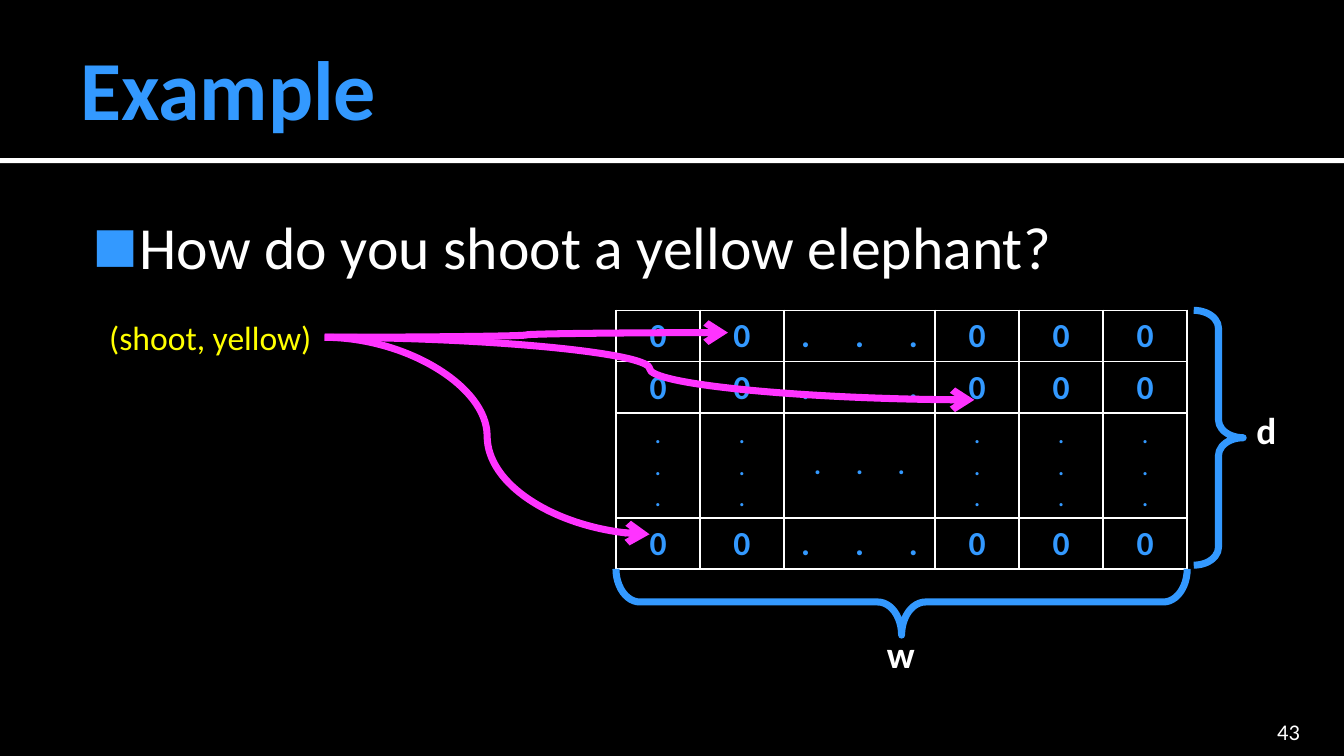
"""Build the slide that shows a feature pair hashed into a d by w table of counters."""
import pptx
import pptx.dml.color
import pptx.enum.shapes
import pptx.enum.text
import pptx.oxml.ns
import pptx.util
from lxml import etree

Pt = pptx.util.Pt
RGBColor = pptx.dml.color.RGBColor
SHAPE = pptx.enum.shapes.MSO_SHAPE
CONNECTOR = pptx.enum.shapes.MSO_CONNECTOR
ALIGN = pptx.enum.text.PP_ALIGN
ANCHOR = pptx.enum.text.MSO_ANCHOR
qn = pptx.oxml.ns.qn

BLACK = RGBColor(0x00, 0x00, 0x00)
WHITE = RGBColor(0xFF, 0xFF, 0xFF)
BLUE = RGBColor(0x33, 0x99, 0xFF)
YELLOW = RGBColor(0xFF, 0xFF, 0x00)
PINK = RGBColor(0xFF, 0x33, 0xFF)

SLIDE_SIZE = (720, 405)
LINE_WIDTH = 3.78

HEADING = "Example"
QUESTION = "How do you shoot a yellow elephant?"
PAIR = "(shoot, yellow)"
PAGE = "43"
COUNTERS = ["0", "0", ". . .", "0", "0", "0"]
GAP = [".\n.\n.", ".\n.\n.", ". . .", ".\n.\n.", ".\n.\n.", ".\n.\n."]
SKETCH = [(COUNTERS, 18), (COUNTERS, 18), (GAP, 14), (COUNTERS, 18)]

SKETCH_LEFT, SKETCH_TOP = 330, 166.25
COLUMN_WIDTHS = [45, 45, 81, 45, 45, 45]
ROW_HEIGHTS = [27.5, 27.5, 54, 27.5]
SKETCH_WIDTH, SKETCH_HEIGHT = sum(COLUMN_WIDTHS), sum(ROW_HEIGHTS)

BRACES = [
    (639.5, SKETCH_TOP, 26.5, SKETCH_HEIGHT, 180),
    (465.25, 169.5, 35.5, SKETCH_WIDTH, 270),
]
PAIR_END = (174, 180.75)
HASH_TARGETS = [(390, 178.25), (522, 214.25), (348, 286.25)]


def write(frame, text, size, color=WHITE, bold=False, align=ALIGN.LEFT,
          anchor=ANCHOR.TOP, insets=(7.2, 3.6, 7.2, 3.6)):
    """Fill a text frame, one paragraph a line, and spread a row of dots."""
    frame.word_wrap = True
    frame.vertical_anchor = anchor
    (frame.margin_left, frame.margin_top,
     frame.margin_right, frame.margin_bottom) = map(Pt, insets)
    for index, line in enumerate(text.split("\n")):
        paragraph = frame.add_paragraph() if index else frame.paragraphs[0]
        paragraph.alignment = align
        spread = line == ". . ."
        for part in (line[:-1], line[-1]) if spread else (line,):
            run = paragraph.add_run()
            run.text = part
            run.font.name = "Calibri"
            run.font.size = Pt(size)
            run.font.bold = bold
            run.font.color.rgb = color
            if spread and len(part) > 1:
                run.font._element.set("spc", str(round(size / 18 * 1000)))


def label(slide, box, text, size, **style):
    """Add a text box and return its text frame."""
    frame = slide.shapes.add_textbox(*map(Pt, box)).text_frame
    write(frame, text, size, **style)
    return frame


def add_bullet(paragraph):
    """Give a paragraph a blue square bullet with a hanging indent."""
    properties = paragraph._p.get_or_add_pPr()
    properties.set("marL", str(Pt(34.5)))
    properties.set("indent", str(-Pt(25.2)))
    color = etree.SubElement(properties, qn("a:buClr"))
    etree.SubElement(color, qn("a:srgbClr"), val=str(BLUE))
    etree.SubElement(properties, qn("a:buSzPct"), val="80000")
    etree.SubElement(properties, qn("a:buFont"), typeface="Calibri")
    etree.SubElement(properties, qn("a:buChar"), char="■")


def add_borders(cell):
    """Draw white lines on the four sides of a cell."""
    properties = cell._tc.get_or_add_tcPr()
    for index, side in enumerate(("a:lnL", "a:lnR", "a:lnT", "a:lnB")):
        border = etree.Element(qn(side), w=str(Pt(1)))
        fill = etree.SubElement(border, qn("a:solidFill"))
        etree.SubElement(fill, qn("a:srgbClr"), val=str(WHITE))
        properties.insert(index, border)


def add_sketch(slide):
    """Add the table of counters."""
    table = slide.shapes.add_table(
        len(SKETCH), len(COLUMN_WIDTHS), Pt(SKETCH_LEFT), Pt(SKETCH_TOP),
        Pt(SKETCH_WIDTH), Pt(SKETCH_HEIGHT)).table
    table.first_row = table.horz_banding = False
    for column, width in zip(table.columns, COLUMN_WIDTHS):
        column.width = Pt(width)
    for row, height, (values, size) in zip(table.rows, ROW_HEIGHTS, SKETCH):
        row.height = Pt(height)
        for cell, value in zip(row.cells, values):
            write(cell.text_frame, value, size, color=BLUE,
                  bold="\n" not in value, align=ALIGN.CENTER)
            cell.vertical_anchor = ANCHOR.MIDDLE
            cell.margin_left = cell.margin_right = Pt(7.2)
            cell.margin_top = cell.margin_bottom = Pt(2.9)
            cell.fill.background()
            add_borders(cell)


def add_brace(slide, left, top, width, height, rotation):
    """Add a blue brace that marks one dimension of the table."""
    brace = slide.shapes.add_shape(
        SHAPE.LEFT_BRACE, Pt(left), Pt(top), Pt(width), Pt(height))
    brace.rotation = rotation
    brace.adjustments[0] = 0.36
    brace.shadow.inherit = False
    brace.fill.background()
    brace.line.color.rgb = BLUE
    brace.line.width = Pt(LINE_WIDTH)


def add_hash_arrow(slide, target):
    """Add a curved arrow from the pair to a counter."""
    arrow = slide.shapes.add_connector(
        CONNECTOR.CURVE, *map(Pt, PAIR_END + target))
    arrow.line.color.rgb = PINK
    arrow.line.width = Pt(LINE_WIDTH)
    etree.SubElement(arrow.line._get_or_add_ln(), qn("a:tailEnd"), type="arrow")
    etree.SubElement(arrow._element.spPr, qn("a:effectLst"))


def main():
    deck = pptx.Presentation()
    deck.slide_width, deck.slide_height = map(Pt, SLIDE_SIZE)
    slide = deck.slides.add_slide(deck.slide_layouts[6])
    slide.background.fill.solid()
    slide.background.fill.fore_color.rgb = BLACK

    rule = slide.shapes.add_shape(
        SHAPE.RECTANGLE, 0, Pt(84.75), Pt(SLIDE_SIZE[0]), Pt(2.7))
    rule.shadow.inherit = False
    rule.fill.solid()
    rule.fill.fore_color.rgb = WHITE
    rule.line.fill.background()

    label(slide, (36, 9.5, 648, 74), HEADING, 45, color=BLUE, bold=True,
          anchor=ANCHOR.MIDDLE, insets=(7.2, 3.6, 3.6, 3.6))
    question = label(slide, (36, 105, 648, 273), QUESTION, 32,
                     insets=(4.3, 7.2, 7.2, 3.6))
    add_bullet(question.paragraphs[0])
    label(slide, (646, 382.5, 57.5, 16.5), PAGE, 12, align=ALIGN.RIGHT,
          anchor=ANCHOR.BOTTOM, insets=(7.2, 3.6, 7.2, 0))

    add_sketch(slide)
    for brace in BRACES:
        add_brace(slide, *brace)
    label(slide, (666, 214.5, 25, 32), "d", 20, bold=True)
    label(slide, (468, 334.75, 30, 32), "w", 20, bold=True)
    label(slide, (48, 166.25, 126, 29), PAIR, 18, color=YELLOW,
          align=ALIGN.RIGHT)
    for target in HASH_TARGETS:
        add_hash_arrow(slide, target)

    deck.save("out.pptx")


if __name__ == "__main__":
    main()
